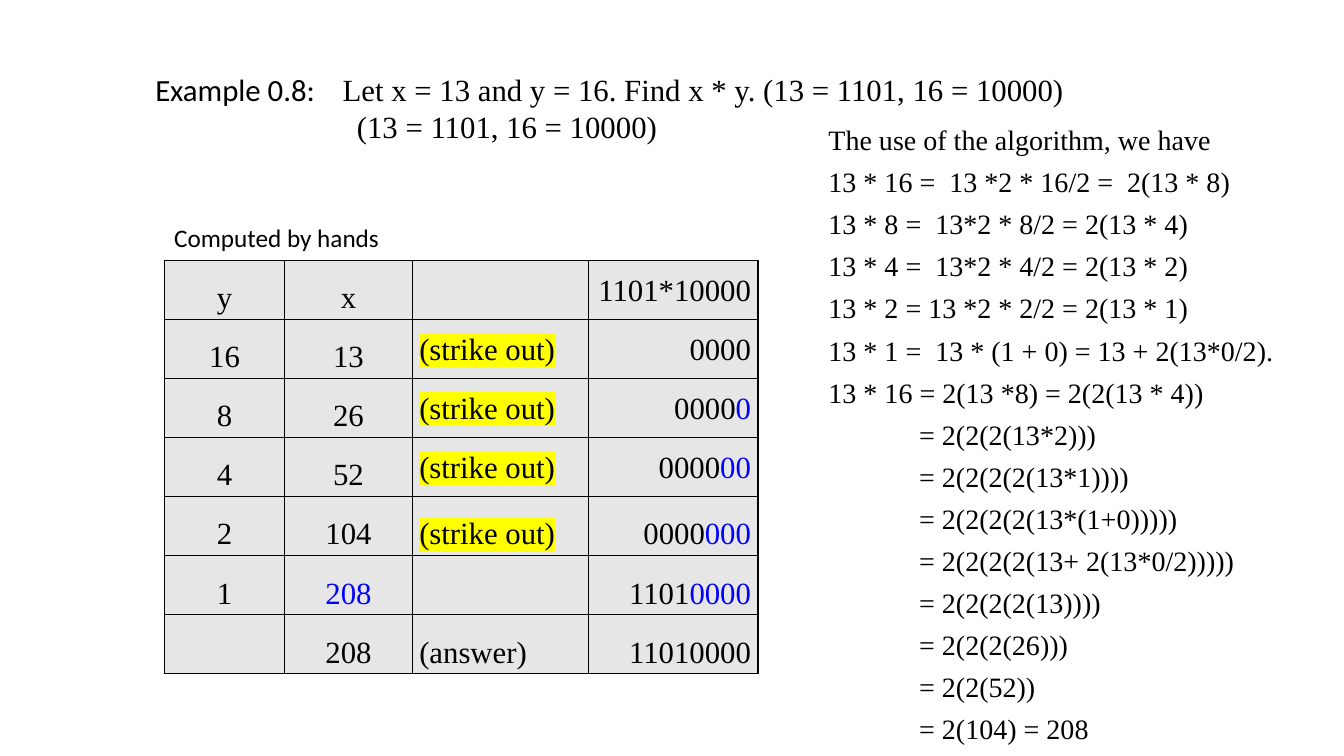
from lxml import etree
from pptx import Presentation
from pptx.dml.color import RGBColor
from pptx.enum.text import MSO_ANCHOR, PP_ALIGN
from pptx.oxml.ns import qn
from pptx.util import Inches, Pt

TOP, MIDDLE = MSO_ANCHOR.TOP, MSO_ANCHOR.MIDDLE
LEFT, CENTER, RIGHT = PP_ALIGN.LEFT, PP_ALIGN.CENTER, PP_ALIGN.RIGHT
UNIT = Inches(0.1)
COLS, ROWS = 133.33, 75
SERIF, SANS = "Times New Roman", "Calibri"
COLOR = {"ink": "000000", "blue": "0000FF", "mark": "FFFF00", "cell": "E7E6E6"}
HEAD = ["y", "x", "", "1101*10000"]
STEPS = [
    ["16", "13", "(strike out)", "0000"],
    ["8", "26", "(strike out)", "00000"],
    ["4", "52", "(strike out)", "000000"],
    ["2", "104", "(strike out)", "0000000"],
    ["1", "208", "", "11010000"],
]
ANSWER = ["", "208", "(answer)", "11010000"]
WIDTHS = [11.95, 12.65, 17.45, 16.85]
ALIGNS = [CENTER, CENTER, LEFT, RIGHT]
PROOF = [
    "The use of the algorithm, we have",
    "13 * 16 =  13 *2 * 16/2 =  2(13 * 8)",
    "13 * 8 =  13*2 * 8/2 = 2(13 * 4)",
    "13 * 4 =  13*2 * 4/2 = 2(13 * 2)",
    "13 * 2 = 13 *2 * 2/2 = 2(13 * 1)",
    "13 * 1 =  13 * (1 + 0) = 13 + 2(13*0/2).",
    "13 * 16 = 2(13 *8) = 2(2(13 * 4))",
    "= 2(2(2(13*2)))",
    "= 2(2(2(2(13*1))))",
    "= 2(2(2(2(13*(1+0)))))",
    "= 2(2(2(2(13+ 2(13*0/2)))))",
    "= 2(2(2(2(13))))",
    "= 2(2(2(26)))",
    "= 2(2(52))",
    "= 2(104) = 208",
]


def grid(*cells):
    return [int(n * UNIT) for n in cells]


def write(para, text, font=SERIF, size=22, color="ink", mark=None,
          align=LEFT, line=1.0, after=0, indent=0, hang=0):
    para.alignment = align
    para.line_spacing = line
    para.space_before = Pt(0)
    para.space_after = Pt(after)
    props = para._p.get_or_add_pPr()
    props.set("marL", str(int(indent * UNIT)))
    props.set("indent", str(int(-hang * UNIT)))
    run = para.add_run()
    run.text = text
    run.font.name = font
    run.font.size = Pt(size)
    run.font.color.rgb = RGBColor.from_string(COLOR[color])
    if mark:
        light = etree.Element(qn("a:highlight"))
        etree.SubElement(light, qn("a:srgbClr"), val=COLOR[mark])
        run._r.rPr.find(qn("a:solidFill")).addnext(light)


def add_box(slide, box):
    frame = slide.shapes.add_textbox(*grid(*box)).text_frame
    frame.word_wrap = True
    return frame


def add_title(slide, box):
    title = slide.shapes.title
    title.left, title.top, title.width, title.height = grid(*box)
    frame = title.text_frame
    frame.vertical_anchor = TOP
    frame.word_wrap = True
    first = frame.paragraphs[0]
    look = {"indent": 18.6, "hang": 18.6}
    write(first, "Example 0.8:", font=SANS, **look)
    write(first, "\tLet x = 13 and y = 16. Find x * y. (13 = 1101, 16 = 10000)", **look)
    write(frame.add_paragraph(), "(13 = 1101, 16 = 10000)", indent=20)


def add_proof(slide, box):
    frame = add_box(slide, box)
    for i, text in enumerate(PROOF):
        para = frame.add_paragraph() if i else frame.paragraphs[0]
        indent = 9 if text.startswith("=") else 0
        write(para, text, size=20, after=6, indent=indent)


def add_label(slide, box):
    frame = add_box(slide, box)
    write(frame.paragraphs[0], "Computed by hands", font=SANS, size=18)


def style(cell):
    cell.fill.solid()
    cell.fill.fore_color.rgb = RGBColor.from_string(COLOR["cell"])
    cell.vertical_anchor = MIDDLE
    cell.margin_left = cell.margin_right = Inches(0.07)
    cell.margin_top = cell.margin_bottom = 0
    props = cell._tc.get_or_add_tcPr()
    for i, side in enumerate(("lnL", "lnR", "lnT", "lnB")):
        edge = etree.Element(qn("a:" + side), w=str(Pt(1)))
        fill = etree.SubElement(edge, qn("a:solidFill"))
        etree.SubElement(fill, qn("a:srgbClr"), val=COLOR["ink"])
        props.insert(i, edge)


def add_sums(slide, box):
    data = [HEAD, *STEPS, ANSWER]
    table = slide.shapes.add_table(len(data), len(HEAD), *grid(*box)).table
    table.first_row = table.horz_banding = False
    for col, width in zip(table.columns, WIDTHS):
        col.width = int(width * UNIT)
    for r, row in enumerate(data):
        table.rows[r].height = int(box[3] * UNIT / len(data))
        for c, text in enumerate(row):
            cell = table.cell(r, c)
            style(cell)
            if not text:
                continue
            para = cell.text_frame.paragraphs[0]
            look = {"align": ALIGNS[c], "line": 1.5 if c < 2 or r > 3 else 1.07}
            if c == 3 and row in STEPS:
                write(para, text[:4], **look)
                if text[4:]:
                    write(para, text[4:], color="blue", **look)
            else:
                last = c == 1 and row is STEPS[-1]
                mark = "mark" if text == "(strike out)" else None
                write(para, text, color="blue" if last else "ink", mark=mark, **look)


def main():
    deck = Presentation()
    deck.slide_width, deck.slide_height = grid(COLS, ROWS)
    slide = deck.slides.add_slide(deck.slide_layouts[5])
    add_sums(slide, (16.3, 25.85, sum(WIDTHS), 41))
    add_title(slide, (14.4, 6.5, 101.6, 12.1))
    add_proof(slide, (81.2, 11.7, 47.5, 63.3))
    add_label(slide, (16.3, 21.6, 24.6, 4))
    deck.save("out.pptx")


if __name__ == "__main__":
    main()
